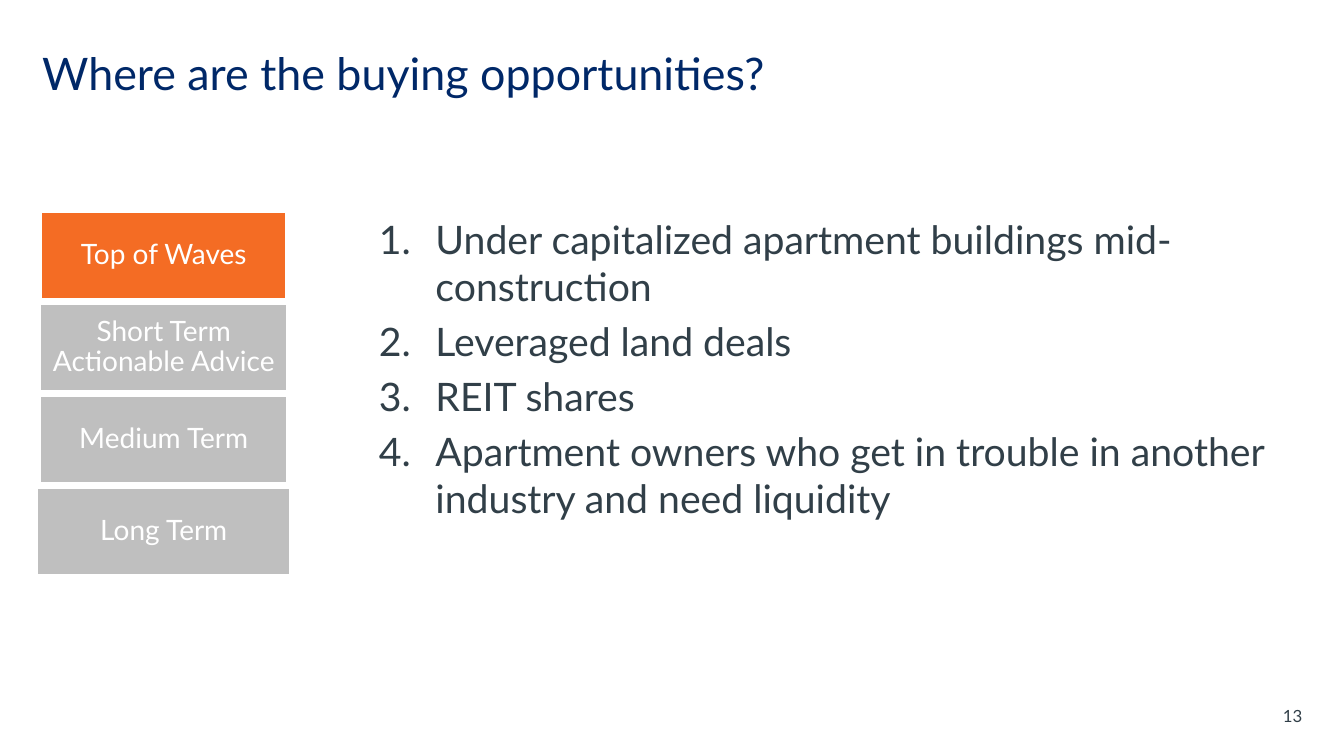
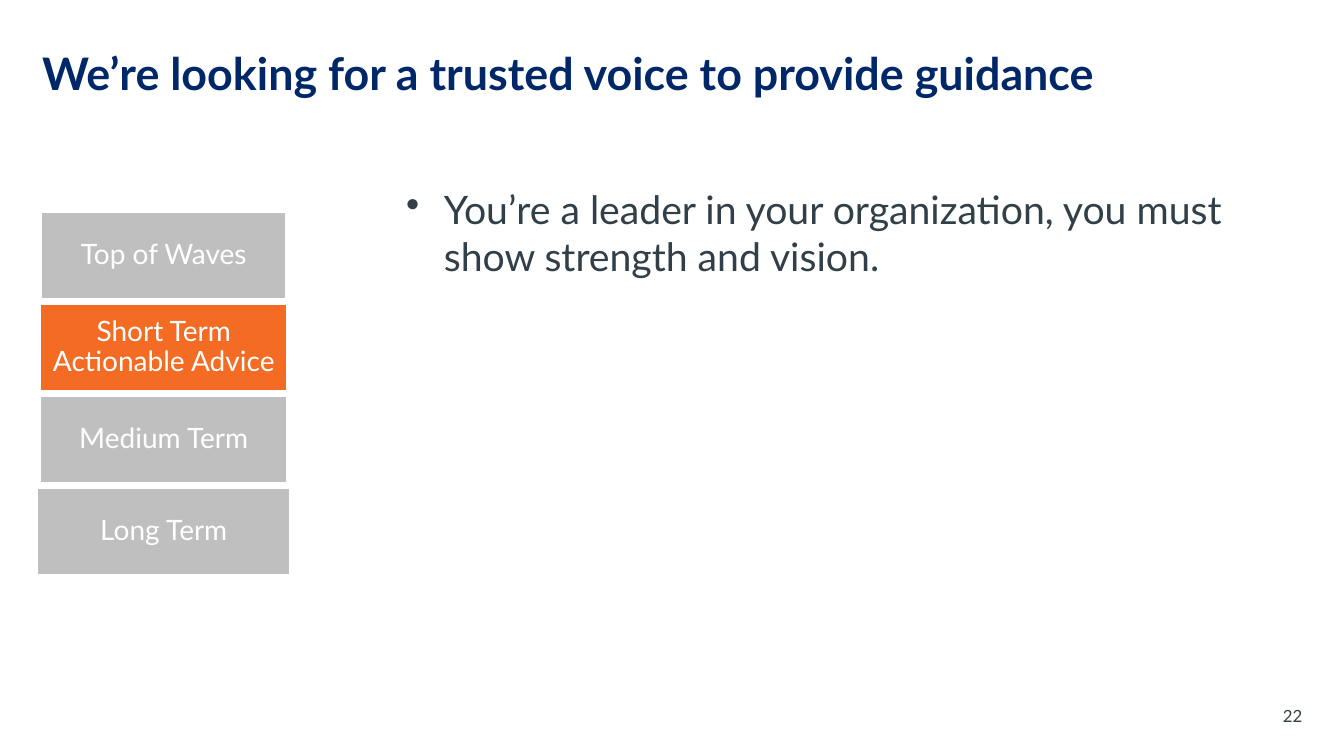
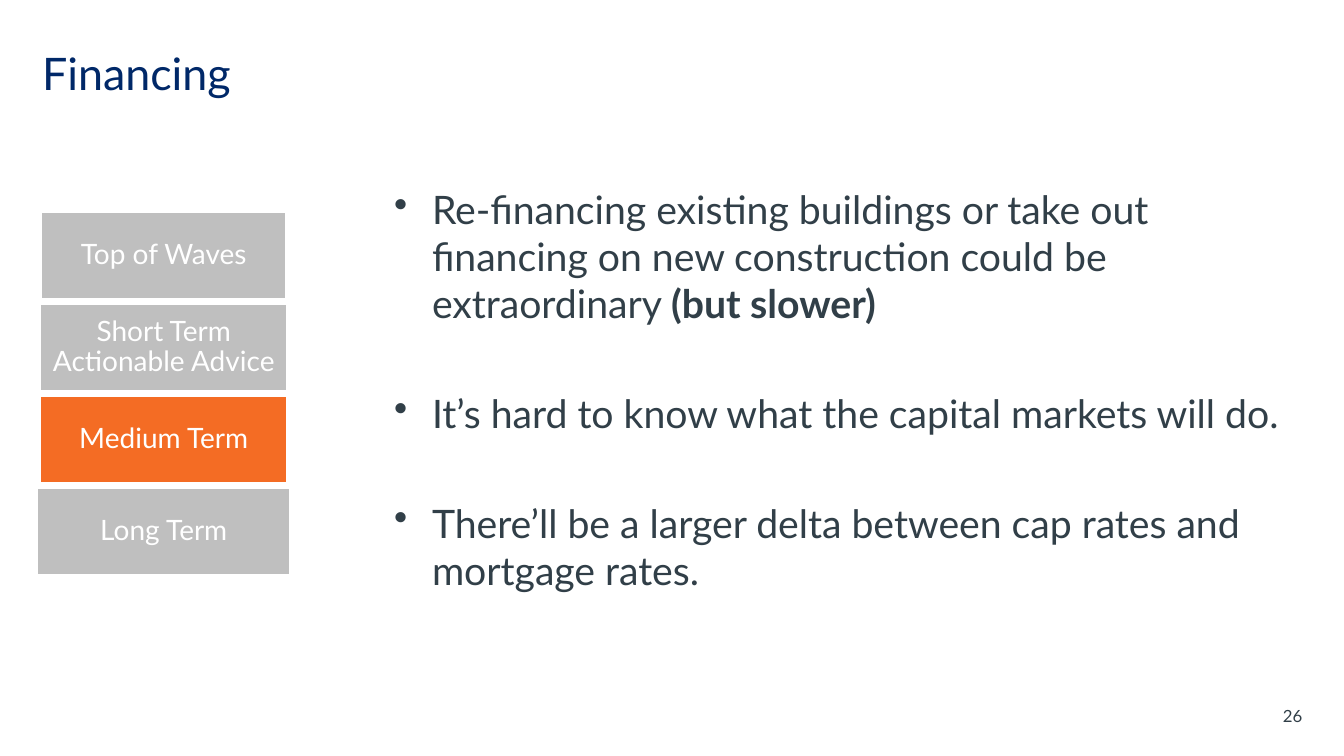
import dataclasses

import lxml.etree
import pptx
import pptx.dml.color
import pptx.enum.shapes
import pptx.enum.text
import pptx.oxml.ns
import pptx.util

Pt = pptx.util.Pt
ALIGN = pptx.enum.text.PP_ALIGN
ANCHOR = pptx.enum.text.MSO_ANCHOR


def rgb(value):
    return pptx.dml.color.RGBColor.from_string(value)


@dataclasses.dataclass(frozen=True)
class Theme:
    font: str = "Lato"
    title_color: str = "002868"
    text_color: str = "313F48"
    white: str = "FFFFFF"
    active: str = "F46C24"
    inactive: str = "BFBFBF"
    title_size: float = 32
    body_size: float = 28
    step_size: float = 20
    number_size: float = 12


# Label and width of each step; all share one centre line.
STEPS = [
    ("Top of Waves", 175.7),
    ("Short Term Actionable Advice", 177.1),
    ("Medium Term", 177.1),
    ("Long Term", 181.4),
]
STEP_CENTER, STEP_TOP, STEP_HEIGHT, STEP_PITCH = 117, 151.2, 62.6, 65.8
RIGHT_EDGE, BODY_BOTTOM = 937.4, 485.3
BULLET = ("buChar", {"char": "•"})
NUMBER = ("buAutoNum", {"type": "arabicPeriod"})


class Deck:
    def __init__(self, theme):
        self.theme = theme
        self.presentation = pptx.Presentation()
        self.presentation.slide_width = Pt(960)
        self.presentation.slide_height = Pt(540)
        self.slide = None

    def add_slide(self, title, number, active_step, bold_title=False):
        """Start a slide with the title, page number and step column."""
        layout = self.presentation.slide_layouts[6]
        self.slide = self.presentation.slides.add_slide(layout)
        self.add_label(title, 23, 10.1, 84.2, self.theme.title_size,
                       self.theme.title_color, ALIGN.LEFT, bold_title)
        self.add_label(str(number), 885.6, 496.8, 28.8, self.theme.number_size,
                       self.theme.text_color, ALIGN.RIGHT)
        self.add_steps(active_step)

    def add_text_box(self, left, top, height, anchor):
        """Add an empty text frame that reaches to the right edge."""
        box = self.slide.shapes.add_textbox(
            Pt(left), Pt(top), Pt(RIGHT_EDGE - left), Pt(height))
        box.text_frame.word_wrap = True
        box.text_frame.vertical_anchor = anchor
        return box.text_frame

    def format_runs(self, paragraph, size, color, bold=False):
        for run in paragraph.runs:
            run.font.name = self.theme.font
            run.font.size = Pt(size)
            run.font.color.rgb = rgb(color)
            run.font.bold = bold

    def add_label(self, text, left, top, height, size, color, align, bold=False):
        text_frame = self.add_text_box(left, top, height, ANCHOR.MIDDLE)
        text_frame.text = text
        paragraph = text_frame.paragraphs[0]
        paragraph.alignment = align
        self.format_runs(paragraph, size, color, bold)

    def add_steps(self, active_step):
        for index, (label, width) in enumerate(STEPS):
            shape = self.slide.shapes.add_shape(
                pptx.enum.shapes.MSO_SHAPE.RECTANGLE,
                Pt(STEP_CENTER - width / 2), Pt(STEP_TOP + index * STEP_PITCH),
                Pt(width), Pt(STEP_HEIGHT))
            shape.shadow.inherit = False
            shape.fill.solid()
            shape.fill.fore_color.rgb = rgb(
                self.theme.active if index == active_step else self.theme.inactive)
            shape.line.color.rgb = rgb(self.theme.white)
            shape.line.width = Pt(2)
            text_frame = shape.text_frame
            text_frame.word_wrap = True
            text_frame.vertical_anchor = ANCHOR.MIDDLE
            text_frame.margin_left = text_frame.margin_right = Pt(4.3)
            text_frame.margin_top = text_frame.margin_bottom = Pt(4.3)
            text_frame.text = label
            paragraph = text_frame.paragraphs[0]
            paragraph.alignment = ALIGN.CENTER
            paragraph.line_spacing = 0.9
            self.format_runs(paragraph, self.theme.step_size, self.theme.white)

    def add_list(self, items, left, top, marker=BULLET, indent=27, gap=5.6):
        """Add a marked list; an item is a text or a (text, bold ending) pair."""
        text_frame = self.add_text_box(left, top, BODY_BOTTOM - top, ANCHOR.TOP)
        for index, item in enumerate(items):
            text, ending = item if isinstance(item, tuple) else (item, "")
            paragraph = (text_frame.add_paragraph() if index
                         else text_frame.paragraphs[0])
            paragraph.text = text
            self.set_marker(paragraph, marker, indent)
            if index:
                paragraph.space_before = Pt(gap)
            self.format_runs(paragraph, self.theme.body_size, self.theme.text_color)
            if ending:
                run = paragraph.add_run()
                run.text = ending
                self.format_runs(paragraph, self.theme.body_size,
                                 self.theme.text_color)
                run.font.bold = True

    def set_marker(self, paragraph, marker, indent):
        tag, attributes = marker
        properties = paragraph._p.get_or_add_pPr()
        properties.set("marL", str(Pt(indent)))
        properties.set("indent", str(-Pt(indent)))
        lxml.etree.SubElement(
            properties, pptx.oxml.ns.qn("a:" + tag), attributes)


def main():
    deck = Deck(Theme())

    deck.add_slide("Where are the buying opportunities?", 13, active_step=0)
    deck.add_list([
        "Under capitalized apartment buildings mid-construction",
        "Leveraged land deals",
        "REIT shares",
        "Apartment owners who get in trouble in another industry and need liquidity",
    ], 263.5, 150.5, marker=NUMBER, indent=40.5)

    deck.add_slide("We’re looking for a trusted voice to provide guidance", 22,
                   active_step=1, bold_title=True)
    deck.add_list([
        "You’re a leader in your organization, you must show strength and vision.",
    ], 283, 128.9)

    deck.add_slide("Financing", 26, active_step=2)
    deck.add_list([
        ("Re-financing existing buildings or take out financing on new "
         "construction could be extraordinary ", "(but slower)"),
        "It’s hard to know what the capital markets will do.",
        "There’ll be a larger delta between cap rates and mortgage rates.",
    ], 274.5, 128.9, gap=44.8)

    deck.presentation.save("out.pptx")


if __name__ == "__main__":
    main()
